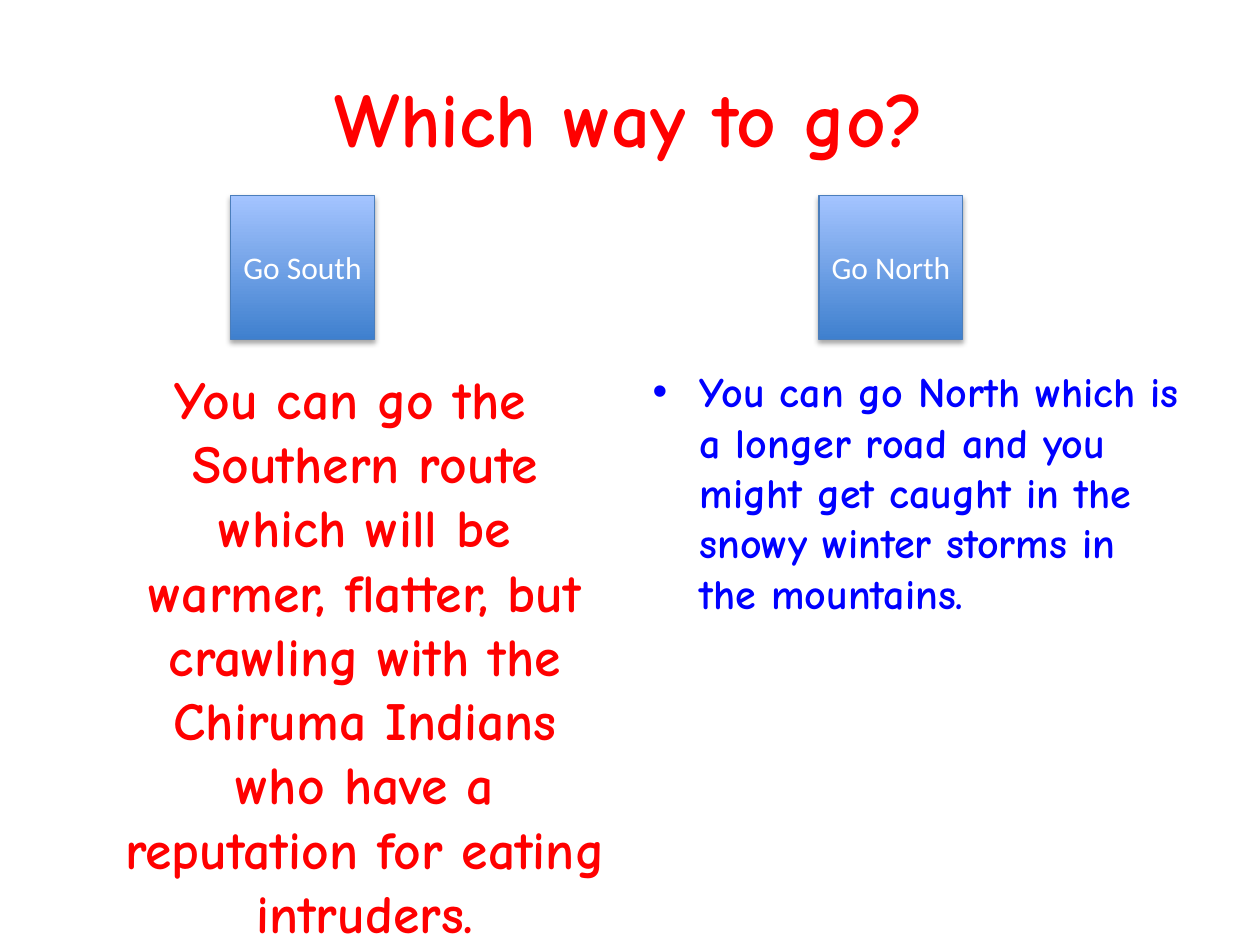
from lxml import etree
from pptx import Presentation
from pptx import util as u
from pptx.dml import color
from pptx.enum import shapes, text
from pptx.oxml import ns

HEADING_FONT = "Comic Neue"
RED, BLUE = "FF0000", "0000FF"
BUTTON_SIZE = u.Cm(2.9)
BODY_DROP = u.Cm(2.11)


def rgb(value):
    return color.RGBColor.from_string(value)


def set_font(para, name, size, value, bold):
    para.font.name = name
    para.font.size = u.Pt(size)
    para.font.bold = bold
    para.font.color.rgb = rgb(value)


def place(shape, left, top, width, height):
    shape.left, shape.top, shape.width, shape.height = left, top, width, height


def add_shadow(shape):
    shape.shadow.inherit = False
    effects = shape._element.spPr.find(ns.qn("a:effectLst"))
    shadow = etree.SubElement(
        effects, ns.qn("a:outerShdw"), blurRad=str(u.Pt(3.1)),
        dist=str(u.Pt(1.8)), dir="5400000", rotWithShape="0")
    black = etree.SubElement(shadow, ns.qn("a:srgbClr"), val="000000")
    etree.SubElement(black, ns.qn("a:alpha"), val="35000")


def fill_title(title, left, top, width, height):
    place(title, left, top, width, height)
    frame = title.text_frame
    frame.text = "Which way to go?"
    frame.vertical_anchor = text.MSO_ANCHOR.MIDDLE
    para = frame.paragraphs[0]
    para.alignment = text.PP_ALIGN.CENTER
    set_font(para, HEADING_FONT, 44, RED, True)


def add_button(page, label, left, top):
    button = page.shapes.add_shape(
        shapes.MSO_SHAPE.ACTION_BUTTON_CUSTOM, left, top, BUTTON_SIZE, BUTTON_SIZE)
    button.fill.gradient()
    button.fill.gradient_angle = 90
    for stop, value in zip(button.fill.gradient_stops, ("3F80CE", "A4C4FF")):
        stop.color.rgb = rgb(value)
    button.line.color.rgb = rgb("4B7EBC")
    button.line.width = u.Pt(0.75)
    add_shadow(button)
    frame = button.text_frame
    frame.text = label
    frame.word_wrap = False
    frame.vertical_anchor = text.MSO_ANCHOR.MIDDLE
    para = frame.paragraphs[0]
    para.alignment = text.PP_ALIGN.CENTER
    set_font(para, "Calibri", 18, "FFFFFF", False)


def fill_route(page, body, label, wording, size, value, bulleted,
               button_inset, left, top, width, height):
    place(body, left, top + BODY_DROP, width, height - BODY_DROP)
    frame = body.text_frame
    frame.text = wording
    frame.word_wrap = True
    frame.auto_size = text.MSO_AUTO_SIZE.NONE
    frame.margin_top = u.Cm(1.32)
    para = frame.paragraphs[0]
    para.space_before = u.Pt(0)
    set_font(para, HEADING_FONT, size, value, True)
    properties = para._p.get_or_add_pPr()
    properties.set("marL", str(u.Cm(0.95)))
    properties.set("indent", str(u.Cm(-0.95 if bulleted else -0.6)))
    if not bulleted:
        para.alignment = text.PP_ALIGN.CENTER
        etree.SubElement(properties, ns.qn("a:buNone"))
        properties.append(properties.find(ns.qn("a:defRPr")))
    add_button(page, label, left + button_inset, top)


def main():
    deck = Presentation()
    deck.slide_width, deck.slide_height = u.Cm(25.4), u.Cm(19.05)
    page = deck.slides.add_slide(deck.slide_layouts[3])
    title, south, north = page.placeholders
    fill_title(title, u.Cm(1.27), u.Cm(0.76), u.Cm(22.86), u.Cm(3.18))
    column = u.Cm(3.94), u.Cm(11.22), u.Cm(13.08)
    fill_route(
        page, south, "Go South",
        "You can go the Southern route which will be warmer, flatter, but "
        "crawling with the Chiruma Indians who have a reputation for eating "
        "intruders.",
        30.6, RED, False, u.Cm(3.38), u.Cm(1.27), *column)
    fill_route(
        page, north, "Go North",
        "You can go North which is a longer road and you might get caught in "
        "the snowy winter storms in the mountains.",
        24, BLUE, True, u.Cm(3.61), u.Cm(12.9), *column)
    deck.save("out.pptx")


if __name__ == "__main__":
    main()
